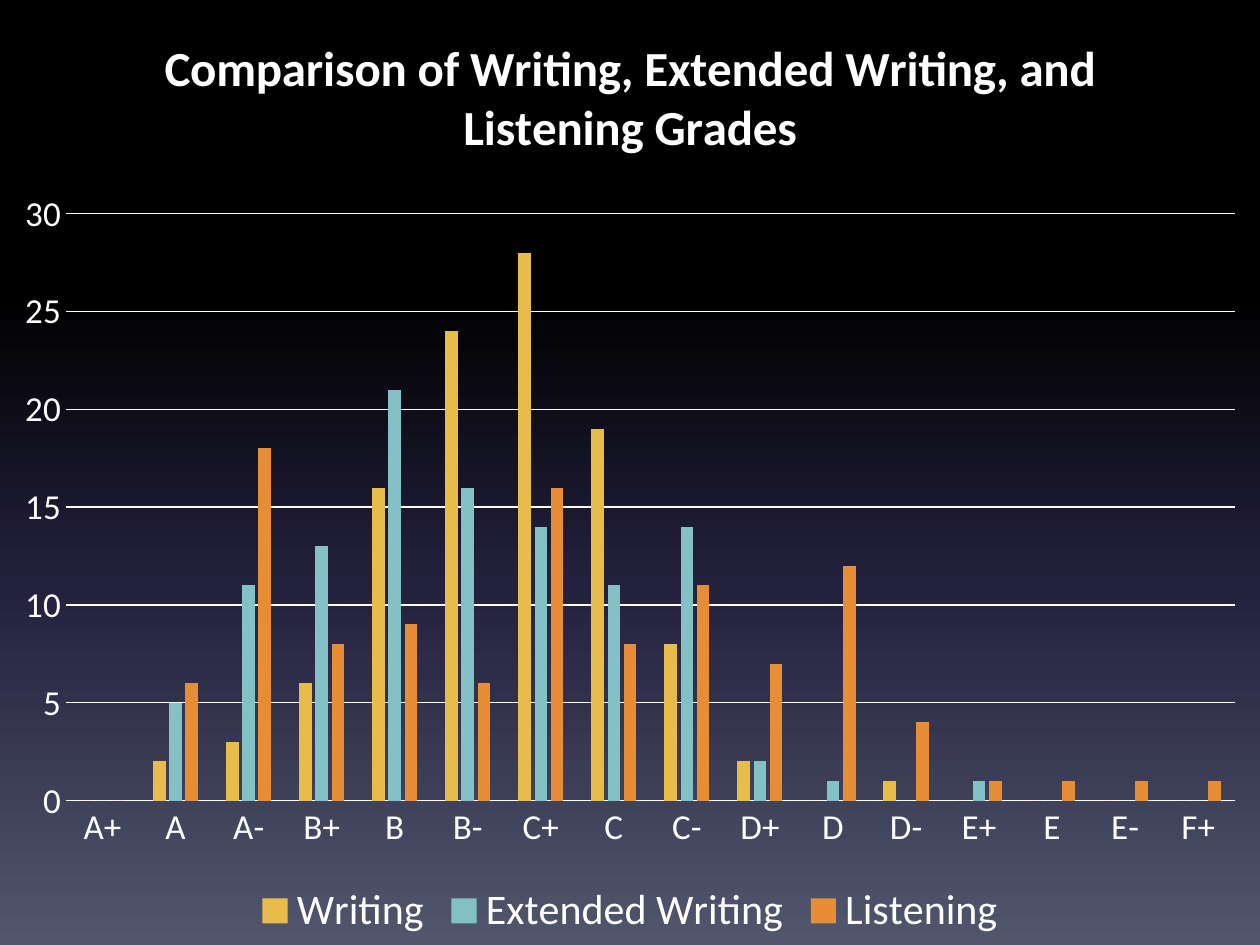
from dataclasses import dataclass

from lxml import etree
from pptx import Presentation
from pptx.chart.data import CategoryChartData
from pptx.dml.color import RGBColor
from pptx.enum import chart as ch
from pptx.oxml import ns
from pptx.util import Inches, Pt

WHITE = RGBColor(0xFF, 0xFF, 0xFF)
BLACK = RGBColor(0x00, 0x00, 0x00)
INDIGO = RGBColor(0x24, 0x21, 0x3E)
SLATE = RGBColor(0x51, 0x56, 0x6D)
YELLOW = RGBColor(0xE8, 0xBC, 0x4A)
TEAL = RGBColor(0x83, 0xC1, 0xC6)
ORANGE = RGBColor(0xE7, 0x8D, 0x35)

FONT = "Calibri"
TITLE = "Comparison of Writing, Extended Writing, and Listening Grades"
GRADES = ["A+", "A", "A-", "B+", "B", "B-", "C+", "C", "C-",
          "D+", "D", "D-", "E+", "E", "E-", "F+"]
BACKDROP = [(0, BLACK), (31, BLACK), (62, INDIGO), (100, SLATE)]


@dataclass
class Skill:
    name: str
    counts: list[int]
    color: RGBColor


SKILLS = [
    Skill("Writing", [0, 2, 3, 6, 16, 24, 28, 19, 8, 2, 0, 1, 0, 0, 0, 0], YELLOW),
    Skill("Extended Writing", [0, 5, 11, 13, 21, 16, 14, 11, 14, 2, 1, 0, 1, 0, 0, 0], TEAL),
    Skill("Listening", [0, 6, 18, 8, 9, 6, 16, 8, 11, 7, 12, 4, 1, 1, 1, 1], ORANGE),
]


def set_font(font, size: float, bold: bool = False) -> None:
    font.name = FONT
    font.size = Pt(size)
    font.bold = bold
    font.color.rgb = WHITE


def set_line(line) -> None:
    line.color.rgb = WHITE
    line.width = Pt(0.75)


def paint_background(slide, stops: list[tuple[int, RGBColor]]) -> None:
    """Fill the background with a top-to-bottom gradient of (percent, colour) stops."""
    fill = slide.background.fill
    fill.gradient()
    gradient = slide.background._cSld.find(".//" + ns.qn("a:gradFill"))
    stop_list = gradient.find(ns.qn("a:gsLst"))
    for stop in list(stop_list):
        stop_list.remove(stop)
    for percent, color in stops:
        stop = etree.SubElement(stop_list, ns.qn("a:gs"), pos=str(percent * 1000))
        etree.SubElement(stop, ns.qn("a:srgbClr"), val=str(color))
    direction = gradient.find(ns.qn("a:lin"))
    direction.set("ang", str(90 * 60000))
    direction.set("scaled", "0")


def add_grade_chart(slide, width: int, height: int):
    data = CategoryChartData()
    data.categories = GRADES
    for skill in SKILLS:
        data.add_series(skill.name, skill.counts)
    frame = slide.shapes.add_chart(
        ch.XL_CHART_TYPE.COLUMN_CLUSTERED, 0, 0, width, height, data)
    chart = frame.chart
    set_font(chart.font, 10)

    plot = chart.plots[0]
    plot.vary_by_categories = False
    plot.gap_width = 219
    plot.overlap = -27
    for series, skill in zip(plot.series, SKILLS):
        series.format.fill.solid()
        series.format.fill.fore_color.rgb = skill.color
        series.invert_if_negative = False
    return chart


def format_axes(chart) -> None:
    for axis in (chart.category_axis, chart.value_axis):
        axis.major_tick_mark = ch.XL_TICK_MARK.NONE
        axis.minor_tick_mark = ch.XL_TICK_MARK.NONE
        set_font(axis.tick_labels.font, 20)
    set_line(chart.category_axis.format.line)

    counts = chart.value_axis
    counts.minimum_scale, counts.maximum_scale, counts.major_unit = 0, 30, 5
    counts.format.line.fill.background()
    counts.has_major_gridlines = True
    set_line(counts.major_gridlines.format.line)


def add_title_and_legend(chart) -> None:
    chart.has_title = True
    chart.chart_title.include_in_layout = False
    para = chart.chart_title.text_frame.paragraphs[0]
    span = para.add_run()
    span.text = TITLE
    set_font(span.font, 28, bold=True)

    chart.has_legend = True
    chart.legend.position = ch.XL_LEGEND_POSITION.BOTTOM
    chart.legend.include_in_layout = False
    set_font(chart.legend.font, 24)


def main() -> None:
    deck = Presentation()
    deck.slide_width, deck.slide_height = Inches(10), Inches(7.5)
    slide = deck.slides.add_slide(deck.slide_layouts[6])
    paint_background(slide, BACKDROP)
    chart = add_grade_chart(slide, deck.slide_width, deck.slide_height)
    format_axes(chart)
    add_title_and_legend(chart)
    deck.save("out.pptx")


if __name__ == "__main__":
    main()
